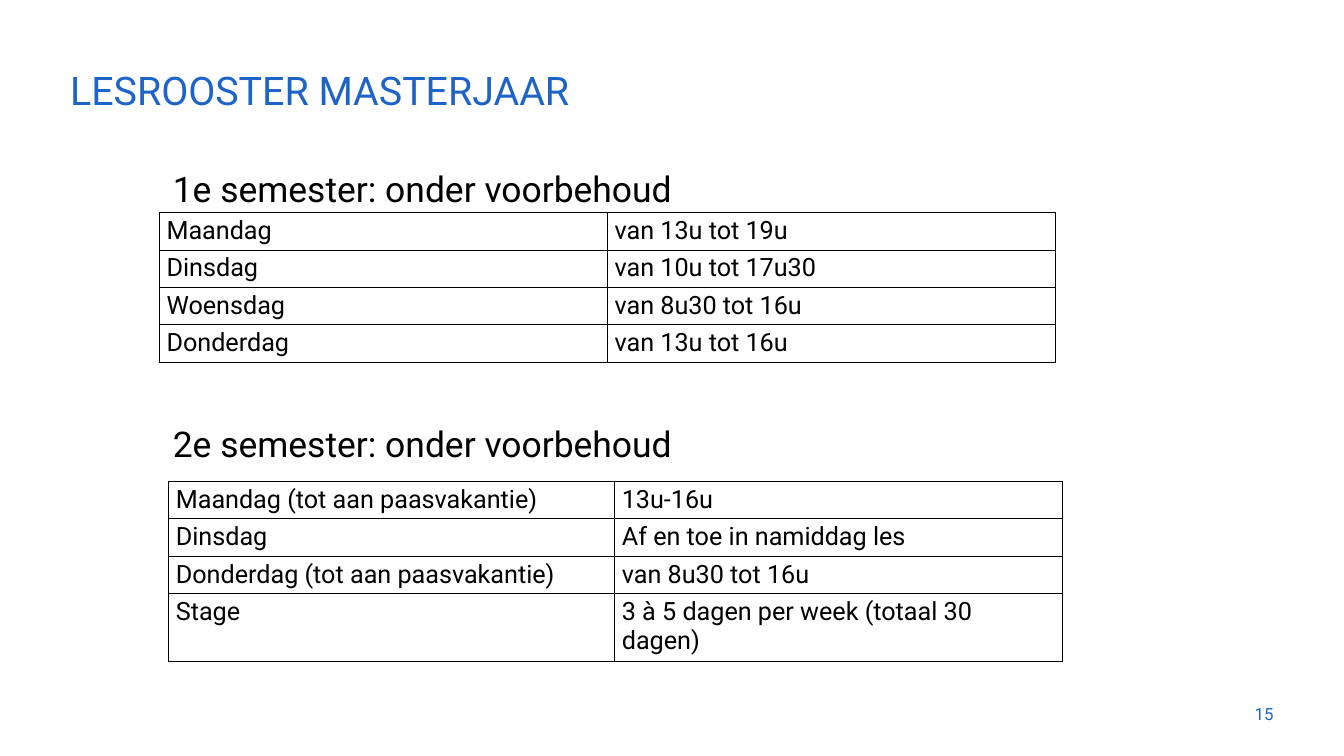
"""Build the timetable slide for the master year."""
from lxml.etree import SubElement
from pptx import Presentation
from pptx.dml.color import RGBColor
from pptx.enum.text import MSO_ANCHOR, PP_ALIGN
from pptx.oxml.ns import qn
from pptx.util import Pt

TITLE = "LESROOSTER MASTERJAAR"
PAGE = "15"
SEMESTERS = [
    {
        "heading": "1e semester: onder voorbehoud",
        "heading_top": 166,
        "table_at": (162, 216),
        "columns": (455, 455),
        "rows": [
            ("Maandag", "van 13u tot 19u"),
            ("Dinsdag", "van 10u tot 17u30"),
            ("Woensdag", "van 8u30 tot 16u"),
            ("Donderdag", "van 13u tot 16u"),
        ],
    },
    {
        "heading": "2e semester: onder voorbehoud",
        "heading_top": 425,
        "table_at": (171.4, 489),
        "columns": (453, 455),
        "rows": [
            ("Maandag (tot aan paasvakantie)", "13u-16u"),
            ("Dinsdag", "Af en toe in namiddag les"),
            ("Donderdag (tot aan paasvakantie)", "van 8u30 tot 16u"),
            ("Stage", "3 à 5 dagen per week (totaal 30 dagen)"),
        ],
    },
]
FONT, BLUE, BLACK = "Roboto", "1E64C8", "000000"
ROW_HEIGHT = 37.2
HEADING_LEFT = 168.5


def rgb(value):
    return RGBColor.from_string(value)


def write(tf, text, size, color, anchor=MSO_ANCHOR.TOP, align=PP_ALIGN.LEFT):
    tf.word_wrap = True
    tf.vertical_anchor = anchor
    p = tf.paragraphs[0]
    p.text = text
    p.alignment = align
    p.font.name, p.font.size, p.font.bold = FONT, Pt(size), False
    p.font.color.rgb = rgb(color)
    return p


def add_text(s, box, *args, **kwargs):
    write(s.shapes.add_textbox(*map(Pt, box)).text_frame, *args, **kwargs)


def add_borders(cell):
    tc_pr = cell._tc.get_or_add_tcPr()
    for side in ("a:lnL", "a:lnR", "a:lnT", "a:lnB"):
        line = SubElement(tc_pr, qn(side), w=str(Pt(1)))
        SubElement(SubElement(line, qn("a:solidFill")), qn("a:srgbClr"), val=BLACK)


def add_timetable(s, at, columns, rows):
    box = (*at, sum(columns), ROW_HEIGHT * len(rows))
    table = s.shapes.add_table(len(rows), len(columns), *map(Pt, box)).table
    table.first_row = table.horz_banding = False
    for column, width in zip(table.columns, columns):
        column.width = Pt(width)
    for row, texts in zip(table.rows, rows):
        row.height = Pt(ROW_HEIGHT)
        for cell, text in zip(row.cells, texts):
            write(cell.text_frame, text, 25.6, BLACK)
            add_borders(cell)
            cell.fill.background()


def main():
    prs = Presentation()
    prs.slide_width, prs.slide_height = Pt(1365), Pt(768)
    s = prs.slides.add_slide(prs.slide_layouts[5])

    title = s.shapes.title
    title.left, title.top, title.width, title.height = map(Pt, (64, 52, 1237, 67.5))
    p = write(title.text_frame, TITLE, 40, BLUE, MSO_ANCHOR.BOTTOM)
    p.line_spacing = 0.9

    for semester in SEMESTERS:
        heading_box = (HEADING_LEFT, semester["heading_top"], 900, 50)
        add_text(s, heading_box, semester["heading"], 36, BLACK)
        add_timetable(s, semester["table_at"], semester["columns"], semester["rows"])

    add_text(s, (1227.5, 705, 73, 41), PAGE, 17.1, BLUE, MSO_ANCHOR.MIDDLE, PP_ALIGN.RIGHT)
    prs.save("out.pptx")


if __name__ == "__main__":
    main()
